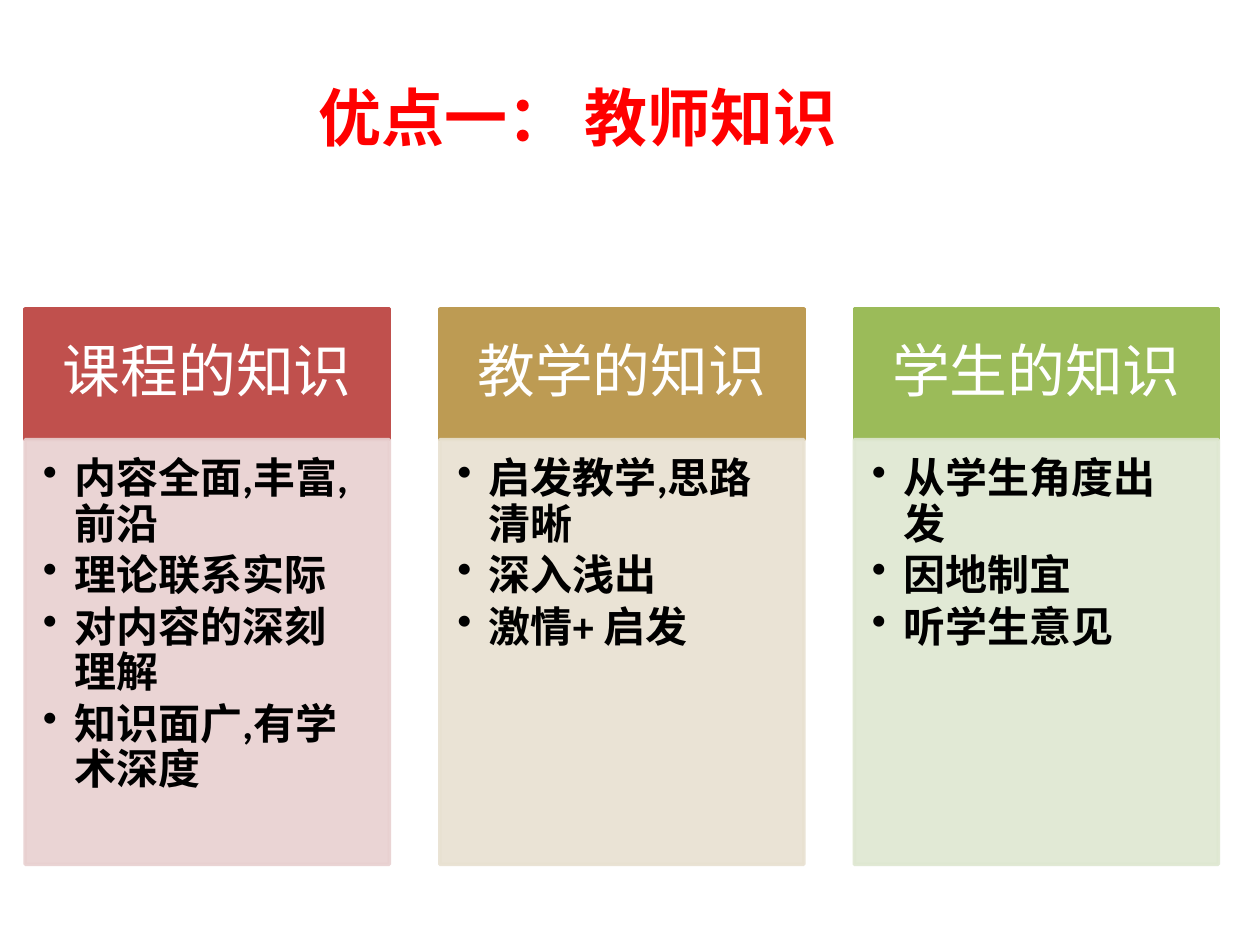
from lxml.etree import SubElement
from pptx import Presentation
from pptx.dml.color import RGBColor
from pptx.enum.shapes import MSO_SHAPE
from pptx.enum.text import MSO_ANCHOR, PP_ALIGN
from pptx.oxml.ns import qn
from pptx.util import Inches, Pt

TITLE = dict(name="Lato", size=Pt(36), bold=True, color="FF0000")
HEADING = dict(name="Calibri", size=Pt(33), bold=False, color="FFFFFF")
ITEM = dict(name="Calibri", size=Pt(24), bold=True, color="000000")
COLUMNS = [
    ("课程的知识", "C0504D", "E8D0D0",
     ["内容全面,丰富,前沿", "理论联系实际", "对内容的深刻理解", "知识面广,有学术深度"]),
    ("教学的知识", "BD9B53", "E8E1D1", ["启发教学,思路清晰", "深入浅出", "激情+ 启发"]),
    ("学生的知识 ", "9BBB59", "DEE7D1", ["从学生角度出发", "因地制宜", "听学生意见"]),
]


def rgb(value):
    return RGBColor.from_string(value)


class Deck:
    """Holds the text styles and the current slide."""

    styles = dict(title=TITLE, heading=HEADING, item=ITEM)

    def __init__(self, prs):
        self.slide = prs.slides.add_slide(prs.slide_layouts[6])

    def add_text(self, p, text, style):
        r = p.add_run()
        r.text = text
        for key, value in self.styles[style].items():
            if key == "color":
                r.font.color.rgb = rgb(value)
            else:
                setattr(r.font, key, value)

    def frame(self, sp, anchor, margins):
        tf = sp.text_frame
        tf.word_wrap = True
        tf.vertical_anchor = anchor
        for side, value in zip(("left", "top", "right", "bottom"), margins):
            setattr(tf, f"margin_{side}", Inches(value))
        return tf

    def title(self, text, box):
        sp = self.slide.shapes.add_textbox(*map(Inches, box))
        p = self.frame(sp, MSO_ANCHOR.MIDDLE, (0.1, 0.05, 0.1, 0.05)).paragraphs[0]
        p.alignment = PP_ALIGN.CENTER
        self.add_text(p, text, "title")

    def panel(self, box, color, alpha=100):
        sp = self.slide.shapes.add_shape(MSO_SHAPE.RECTANGLE, *map(Inches, box))
        sp.shadow.inherit = False
        sp.line.width = Pt(2)
        for fill in (sp.fill, sp.line.fill):
            fill.solid()
            fill.fore_color.rgb = rgb(color)
        if alpha < 100:
            for clr in sp.element.spPr.iter(qn("a:srgbClr")):
                SubElement(clr, qn("a:alpha"), val=str(alpha * 1000))
        return sp

    def heading(self, text, box, color):
        sp = self.panel(box, color)
        p = self.frame(sp, MSO_ANCHOR.MIDDLE, (0.26, 0.15, 0.26, 0.15)).paragraphs[0]
        p.alignment, p.line_spacing = PP_ALIGN.CENTER, 0.9
        self.add_text(p, text, "heading")

    def bullets(self, items, box, color):
        sp = self.panel(box, color, alpha=90)
        tf = self.frame(sp, MSO_ANCHOR.TOP, (0.14, 0.14, 0.19, 0.21))
        for i, item in enumerate(items):
            p = tf.add_paragraph() if i else tf.paragraphs[0]
            p.alignment, p.line_spacing, p.space_after = PP_ALIGN.LEFT, 0.9, Pt(3.6)
            pPr = p._p.get_or_add_pPr()
            pPr.set("marL", str(Inches(0.25)))
            pPr.set("indent", str(-Inches(0.25)))
            SubElement(pPr, qn("a:buChar"), char="•")
            self.add_text(p, item, "item")


def main():
    prs = Presentation()
    prs.slide_width, prs.slide_height = Inches(10), Inches(7.5)
    deck = Deck(prs)
    deck.title("优点一： 教师知识", (-1.34, 0.3, 11.85, 1.25))
    left, top, width, pitch, head_h, body_h = 0.2, 2.45, 2.89, 3.29, 1.04, 3.37
    for i, (text, dark, light, items) in enumerate(COLUMNS):
        x = left + i * pitch
        deck.heading(text, (x, top, width, head_h), dark)
        deck.bullets(items, (x, top + head_h, width, body_h), light)
    prs.save("out.pptx")


if __name__ == "__main__":
    main()
